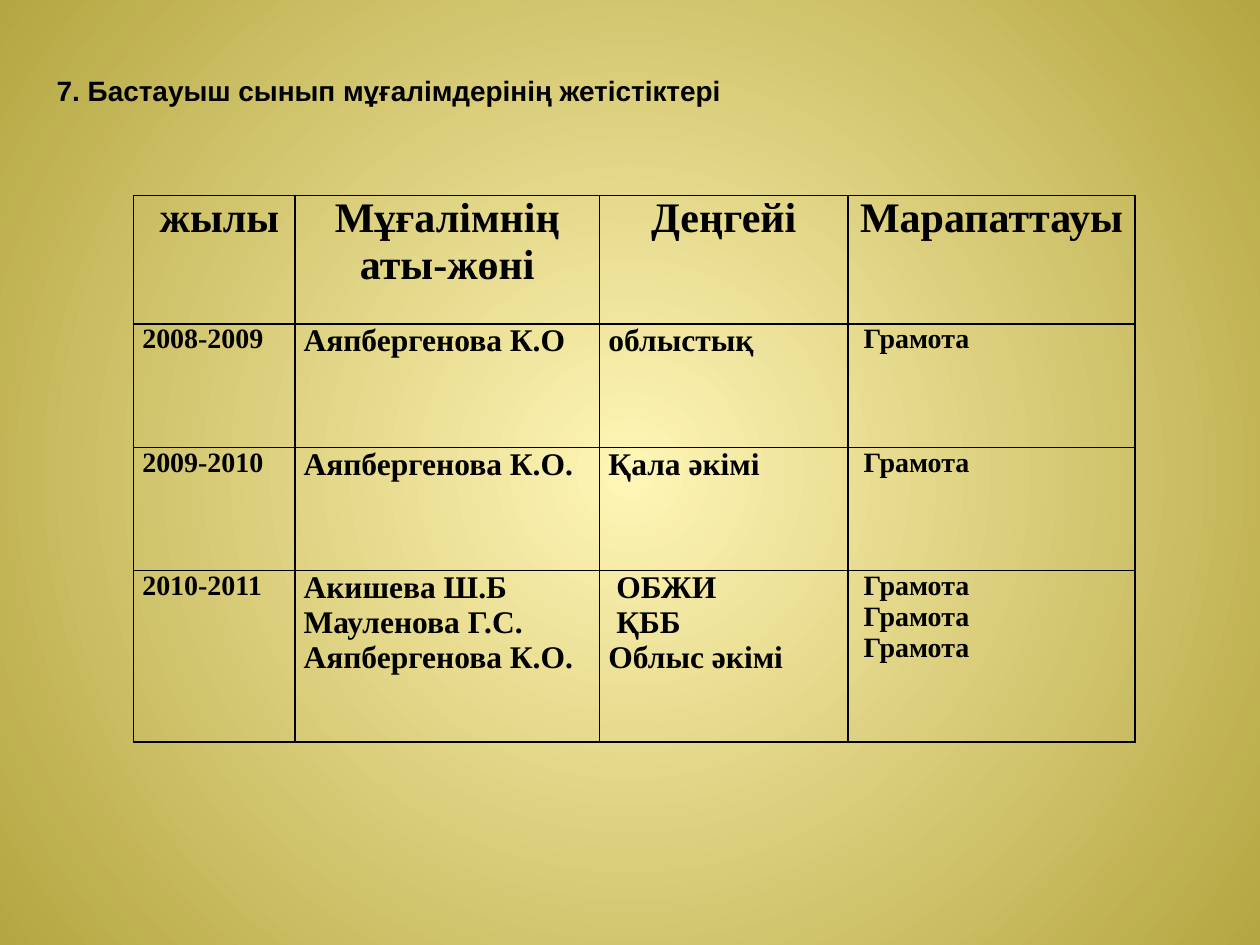
from lxml.etree import SubElement
from pptx import Presentation
from pptx.dml.color import RGBColor
from pptx.enum.text import MSO_ANCHOR as ANCHOR, PP_ALIGN as ALIGN
from pptx.oxml.ns import qn
from pptx.util import Inches, Pt

HEADERS = [" жылы", "Мұғалімнің аты-жөні", "Деңгейі", "Марапаттауы"]
AWARDS = [
    ["2008-2009", "Аяпбергенова К.О", "облыстық", " Грамота"],
    ["2009-2010", "Аяпбергенова К.О.", "Қала әкімі", " Грамота"],
    ["2010-2011", "Акишева Ш.Б\nМауленова Г.С.\nАяпбергенова К.О.",
     " ОБЖИ\n ҚББ\nОблыс әкімі", " Грамота\n Грамота\n Грамота"],
]
COL_WIDTHS = [1.28, 2.42, 1.97, 2.28]
ROW_HEIGHTS = [1.02, 0.98, 0.98, 1.36]
BODY_SIZES = [16, 18, 18, 16]


def rgb(color):
    return RGBColor.from_string(color)


def write(tf, text, size, font="Times New Roman", color="000000", bold=True,
          align=ALIGN.LEFT):
    """Put each line of text in its own paragraph."""
    for i, line in enumerate(text.split("\n")):
        p = tf.paragraphs[0] if i == 0 else tf.add_paragraph()
        p.alignment = align
        r = p.add_run()
        r.text = line
        r.font.size, r.font.name, r.font.bold = Pt(size), font, bold
        r.font.color.rgb = rgb(color)


class AwardsSlide:
    ink = "000000"
    glow = ["FFF5B6", "B4A640"]

    def __init__(self, prs):
        self.s = prs.slides.add_slide(prs.slide_layouts[5])

    def background(self):
        """Fill the slide with a gradient that spreads from its centre."""
        fill = self.s.background.fill
        fill.gradient()
        for stop, color in zip(fill.gradient_stops, self.glow):
            stop.color.rgb = rgb(color)
        grad = next(self.s.element.iter(qn("a:gradFill")))
        grad.remove(grad.find(qn("a:lin")))
        circle = SubElement(grad, qn("a:path"), {"path": "circle"})
        SubElement(circle, qn("a:fillToRect"), dict.fromkeys("ltrb", "50000"))

    def title(self, text, left, top, width, height):
        sp = self.s.shapes.title
        sp.left, sp.top = Inches(left), Inches(top)
        sp.width, sp.height = Inches(width), Inches(height)
        tf = sp.text_frame
        tf.vertical_anchor = ANCHOR.TOP
        tf.margin_top = tf.margin_bottom = 0
        write(tf, text, 16, font="Arial", color=self.ink)

    def borders(self, cell, width=1):
        tc_pr = cell._tc.get_or_add_tcPr()
        for i, side in enumerate("LRTB"):
            ln = SubElement(tc_pr, qn(f"a:ln{side}"), w=str(Pt(width)))
            solid = SubElement(ln, qn("a:solidFill"))
            SubElement(solid, qn("a:srgbClr"), val=self.ink)
            tc_pr.insert(i, ln)

    def table(self, rows, left, top):
        frame = self.s.shapes.add_table(
            len(rows), len(COL_WIDTHS), Inches(left), Inches(top),
            Inches(sum(COL_WIDTHS)), Inches(sum(ROW_HEIGHTS)))
        table = frame.table
        table.first_row = table.horz_banding = False
        for col, width in zip(table.columns, COL_WIDTHS):
            col.width = Inches(width)
        for row, height in zip(table.rows, ROW_HEIGHTS):
            row.height = Inches(height)
        for i, row in enumerate(rows):
            for j, text in enumerate(row):
                cell = table.cell(i, j)
                cell.margin_left = cell.margin_right = Inches(0.07)
                cell.margin_top = cell.margin_bottom = 0
                cell.fill.background()
                self.borders(cell)
                header = i == 0
                write(cell.text_frame, text, 24 if header else BODY_SIZES[j],
                      color=self.ink,
                      align=ALIGN.CENTER if header else ALIGN.LEFT)


def main():
    prs = Presentation()
    prs.slide_width, prs.slide_height = Inches(10), Inches(7.5)
    slide = AwardsSlide(prs)
    slide.background()
    slide.table([HEADERS] + AWARDS, 1.06, 1.55)
    slide.title("7. Бастауыш сынып мұғалімдерінің жетістіктері",
                0.35, 0.58, 9.3, 0.5)
    prs.save("out.pptx")


if __name__ == "__main__":
    main()
